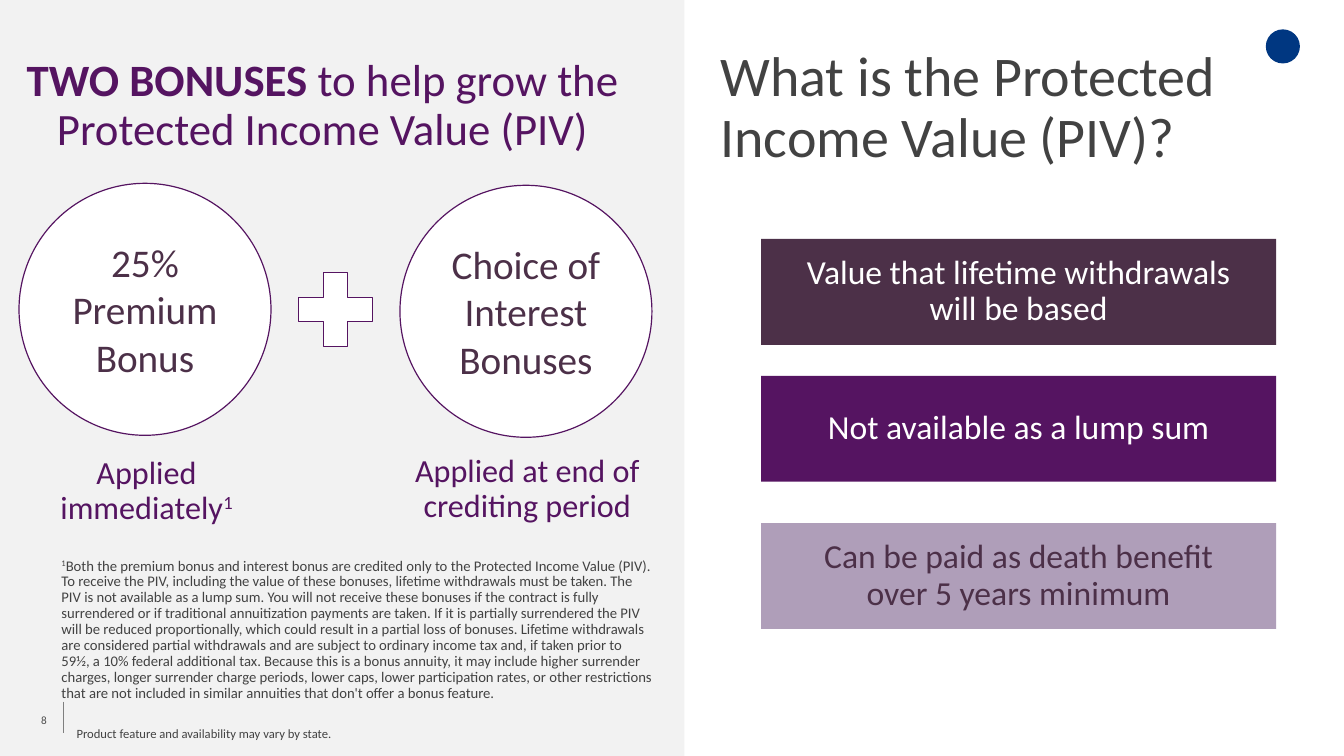
from dataclasses import dataclass

from lxml import etree
from pptx import Presentation
from pptx import util as u
from pptx.dml.color import RGBColor
from pptx.enum import shapes, text
from pptx.oxml import ns

FONT = "Calibri"
PURPLE, PLUM, LILAC = "551461", "4C3048", "AF9EB9"
WHITE, PALE, CHARCOAL = "FFFFFF", "F2F2F2", "424242"
DEFAULT_INSETS = (0.25, 0.13, 0.25, 0.13)

Kind = shapes.MSO_SHAPE
Align = text.PP_ALIGN
Anchor = text.MSO_ANCHOR


@dataclass(frozen=True)
class Frame:
    """Place and size in centimetres."""
    left: float
    top: float
    width: float
    height: float

    def lengths(self) -> tuple:
        return tuple(u.Cm(n) for n in (self.left, self.top, self.width, self.height))


@dataclass(frozen=True)
class Span:
    text: str
    bold: bool = False
    raised: bool = False


@dataclass(frozen=True)
class Label:
    spans: tuple[Span, ...]
    size: float
    color: str
    align: Align = Align.LEFT
    anchor: Anchor = Anchor.TOP
    spacing: float = 0.9
    insets: tuple = DEFAULT_INSETS


@dataclass(frozen=True)
class TextBlock:
    frame: Frame
    label: Label


@dataclass(frozen=True)
class Figure:
    kind: Kind
    frame: Frame
    fill: str
    outline: str | None = None
    label: Label | None = None


def rgb(value: str) -> RGBColor:
    return RGBColor.from_string(value)


def centered(words: str, size: float, color: str, spacing: float = 0.9) -> Label:
    return Label((Span(words),), size, color, Align.CENTER, Anchor.MIDDLE, spacing)


def write(box, label: Label) -> None:
    frame = box.text_frame
    frame.word_wrap = True
    frame.vertical_anchor = label.anchor
    (frame.margin_left, frame.margin_top,
     frame.margin_right, frame.margin_bottom) = (u.Cm(n) for n in label.insets)
    para = frame.paragraphs[0]
    para.alignment = label.align
    para.line_spacing = label.spacing
    para.font.name = FONT
    para.font.size = u.Pt(label.size)
    para.font.color.rgb = rgb(label.color)
    for span in label.spans:
        for index, line in enumerate(span.text.split("\n")):
            if index:
                para.add_line_break()
            run = para.add_run()
            run.text = line
            if span.bold:
                run.font.bold = True
            if span.raised:
                run.font._element.set("baseline", "30000")


def draw_figure(page, figure: Figure):
    shape = page.shapes.add_shape(figure.kind, *figure.frame.lengths())
    shape.shadow.inherit = False
    shape.fill.solid()
    shape.fill.fore_color.rgb = rgb(figure.fill)
    if figure.outline:
        shape.line.color.rgb = rgb(figure.outline)
        shape.line.width = u.Pt(0.85)
    else:
        shape.line.fill.background()
    if figure.label:
        write(shape, figure.label)
    return shape


def draw_text(page, block: TextBlock) -> None:
    write(page.shapes.add_textbox(*block.frame.lengths()), block.label)


def draw_footer_rule(page) -> None:
    x = u.Cm(1.6)
    rule = page.shapes.add_connector(
        shapes.MSO_CONNECTOR.STRAIGHT, x, u.Cm(17.68), x, u.Cm(18.47))
    rule.line.color.rgb = rgb("7F7F7F")
    rule.line.width = u.Pt(0.75)
    etree.SubElement(rule._element.spPr, ns.qn("a:effectLst"))


def bonus_circle(left: float, top: float, words: str) -> Figure:
    return Figure(Kind.OVAL, Frame(left, top, 6.35, 6.35), WHITE, PURPLE,
                  centered(words, 28, PLUM, 1.0))


def fact_bar(top: float, fill: str, color: str, words: str) -> Figure:
    return Figure(Kind.RECTANGLE, Frame(19.18, top, 12.98, 2.67), fill,
                  label=centered(words, 24, color))


BADGE = Figure(Kind.OVAL, Frame(31.9, 0.74, 0.86, 0.86), "003781")
LEFT_PANEL = Figure(Kind.RECTANGLE, Frame(0, 0, 17.25, 19.05), PALE)
PLUS = Figure(Kind.MATH_PLUS, Frame(7.19, 6.53, 2.54, 2.54), WHITE, PURPLE)
FIGURES = (
    bonus_circle(0.48, 4.62, "25% Premium Bonus"),
    bonus_circle(10.08, 4.67, "Choice of Interest Bonuses"),
    fact_bar(6.02, PLUM, WHITE, "Value that lifetime withdrawals\nwill be based"),
    fact_bar(9.47, PURPLE, WHITE, "Not available as a lump sum"),
    fact_bar(13.18, LILAC, PLUM, "Can be paid as death benefit\nover 5 years minimum"),
)

DISCLOSURE = " ".join((
    "Both the premium bonus and interest bonus are credited only to the Protected "
    "Income Value (PIV).",
    "To receive the PIV, including the value of these bonuses, lifetime withdrawals "
    "must be taken.",
    "The PIV is not available as a lump sum.",
    "You will not receive these bonuses if the contract is fully surrendered or if "
    "traditional annuitization payments are taken.",
    "If it is partially surrendered the PIV will be reduced proportionally, which "
    "could result in a partial loss of bonuses.",
    "Lifetime withdrawals are considered partial withdrawals and are subject to "
    "ordinary income tax and, if taken prior to 59½, a 10% federal additional tax.",
    "Because this is a bonus annuity, it may include higher surrender charges, longer "
    "surrender charge periods, lower caps, lower participation rates, or other "
    "restrictions that are not included in similar annuities that don't offer a bonus "
    "feature.",
))

TEXT_BLOCKS = (
    TextBlock(Frame(-0.99, 1.09, 18.24, 3.18), Label(
        (Span("TWO BONUSES ", bold=True),
         Span("to help grow the Protected Income Value (PIV)")),
        32, PURPLE, Align.CENTER, Anchor.MIDDLE, insets=(0, 0, 0, 0))),
    TextBlock(Frame(1.04, 17.63, 1.02, 1.02), Label(
        (Span("8"),), 8, "4D4D4D", anchor=Anchor.MIDDLE, spacing=1.0,
        insets=(0, 0.15, 0, 0.15))),
    TextBlock(Frame(1.22, 11.38, 4.95, 2.64), Label(
        (Span("Applied immediately"), Span("1", raised=True)),
        23, PURPLE, Align.CENTER)),
    TextBlock(Frame(10.08, 11.33, 6.43, 2.64), Label(
        (Span("Applied at end of crediting period"),), 23, PURPLE, Align.CENTER)),
    TextBlock(Frame(17.91, 1.09, 14.3, 3.35), Label(
        (Span("What is the Protected Income Value (PIV)?"),), 40, CHARCOAL)),
    TextBlock(Frame(1.3, 13.94, 15.42, 1.9), Label(
        (Span("1", raised=True), Span(DISCLOSURE)), 10.5, CHARCOAL)),
    TextBlock(Frame(1.68, 18.21, 8.64, 0.64), Label(
        (Span("Product feature and availability may vary by state."),), 9, CHARCOAL)),
)


def main() -> None:
    deck = Presentation()
    deck.slide_width, deck.slide_height = u.Cm(33.87), u.Cm(19.05)
    page = deck.slides.add_slide(deck.slide_layouts[6])
    for figure in (BADGE, LEFT_PANEL, *FIGURES):
        draw_figure(page, figure)
    draw_figure(page, PLUS).adjustments[0] = 0.235
    for block in TEXT_BLOCKS:
        draw_text(page, block)
    draw_footer_rule(page)
    deck.save("out.pptx")


if __name__ == "__main__":
    main()
